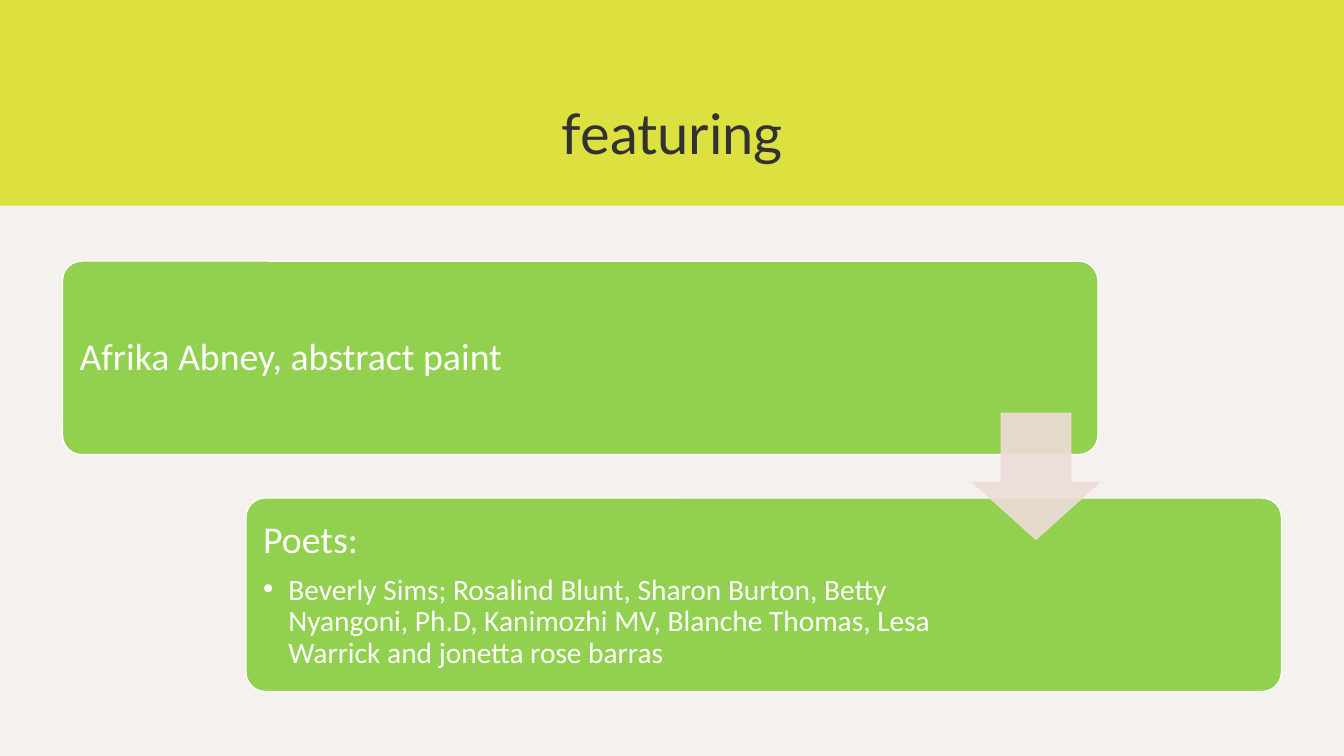
"""Build the "featuring" slide with two stepped cards joined by an arrow."""
from lxml import etree
from pptx import Presentation
from pptx.dml.color import RGBColor
from pptx.enum.shapes import MSO_SHAPE
from pptx.enum.text import MSO_ANCHOR, PP_ALIGN
from pptx.oxml.ns import qn
from pptx.util import Inches, Pt

RECT, ROUND, DOWN = MSO_SHAPE.RECTANGLE, MSO_SHAPE.ROUNDED_RECTANGLE, MSO_SHAPE.DOWN_ARROW
MIDDLE, LEFT, CENTER = MSO_ANCHOR.MIDDLE, PP_ALIGN.LEFT, PP_ALIGN.CENTER
COLORS = {"lime": "DDE13F", "panel": "F4F1EF", "card": "92D050",
          "white": "FFFFFF", "title": "323232", "arrow": "EEDCD8"}


def add_block(kind, box, fill, line=None):
    sp = slide.shapes.add_shape(kind, *[Inches(v) for v in box])
    sp.shadow.inherit = False
    sp.fill.solid()
    sp.fill.fore_color.rgb = RGBColor.from_string(COLORS[fill])
    if line:
        sp.line.color.rgb = RGBColor.from_string(COLORS[line])
        sp.line.width = Pt(1)
    else:
        sp.line.fill.background()
    return sp


def add_run(p, text, size, font, color):
    r = p.add_run()
    r.text = text
    r.font.size = Pt(size)
    r.font.name = font
    r.font.color.rgb = RGBColor.from_string(COLORS[color])


prs = Presentation()
prs.slide_width, prs.slide_height = Inches(13.33), Inches(7.5)
slide = prs.slides.add_slide(prs.slide_layouts[5])
slide.background.fill.solid()
slide.background.fill.fore_color.rgb = RGBColor.from_string(COLORS["lime"])

title = slide.shapes.title
title.left, title.top, title.width, title.height = [Inches(v) for v in (1.56, 0.77, 10.22, 1.09)]
tf = title.text_frame
tf.vertical_anchor = MIDDLE
tf.paragraphs[0].alignment = CENTER
add_run(tf.paragraphs[0], "featuring", 40, "Lato", "title")

add_block(RECT, (0, 2.04, 13.33, 5.46), "panel")

cards = [
    (0.62, 2.59, 8.29, "Afrika Abney, abstract paint", []),
    (2.44, 4.94, 7.1, "Poets:", [
        "Beverly Sims; Rosalind Blunt, Sharon Burton, Betty Nyangoni, Ph.D, "
        "Kanimozhi MV, Blanche Thomas, Lesa Warrick and jonetta rose barras"]),
]
for left, top, text_width, heading, bullets in cards:
    sp = add_block(ROUND, (left, top, 10.27, 1.92), "card", "white")
    sp.adjustments[0] = 0.1
    tb = slide.shapes.add_textbox(Inches(left + 0.06), Inches(top + 0.06),
                                  Inches(text_width), Inches(1.81))
    tf = tb.text_frame
    tf.word_wrap = True
    tf.vertical_anchor = MIDDLE
    tf.margin_left = tf.margin_right = tf.margin_top = tf.margin_bottom = Inches(0.11)
    p = tf.paragraphs[0]
    p.alignment = LEFT
    p.line_spacing = 0.9
    p.space_after = Pt(9.5)
    add_run(p, heading, 27, "Calibri", "white")
    for text in bullets:
        p = tf.add_paragraph()
        p.level = 1
        p.alignment = LEFT
        p.line_spacing = 0.9
        p.space_after = Pt(3)
        add_run(p, text, 21, "Calibri", "white")
        pPr = p._p.get_or_add_pPr()
        pPr.set("marL", str(Inches(0.25)))
        pPr.set("indent", str(Inches(-0.25)))
        etree.SubElement(pPr, qn("a:buFont")).set("typeface", "Arial")
        etree.SubElement(pPr, qn("a:buChar")).set("char", "•")

arrow = add_block(DOWN, (9.65, 4.1, 1.25, 1.25), "arrow", "arrow")
arrow.adjustments[0], arrow.adjustments[1] = 0.55, 0.45
for clr in arrow._element.spPr.iter(qn("a:srgbClr")):
    etree.SubElement(clr, qn("a:alpha")).set("val", "90000")

prs.save("out.pptx")
